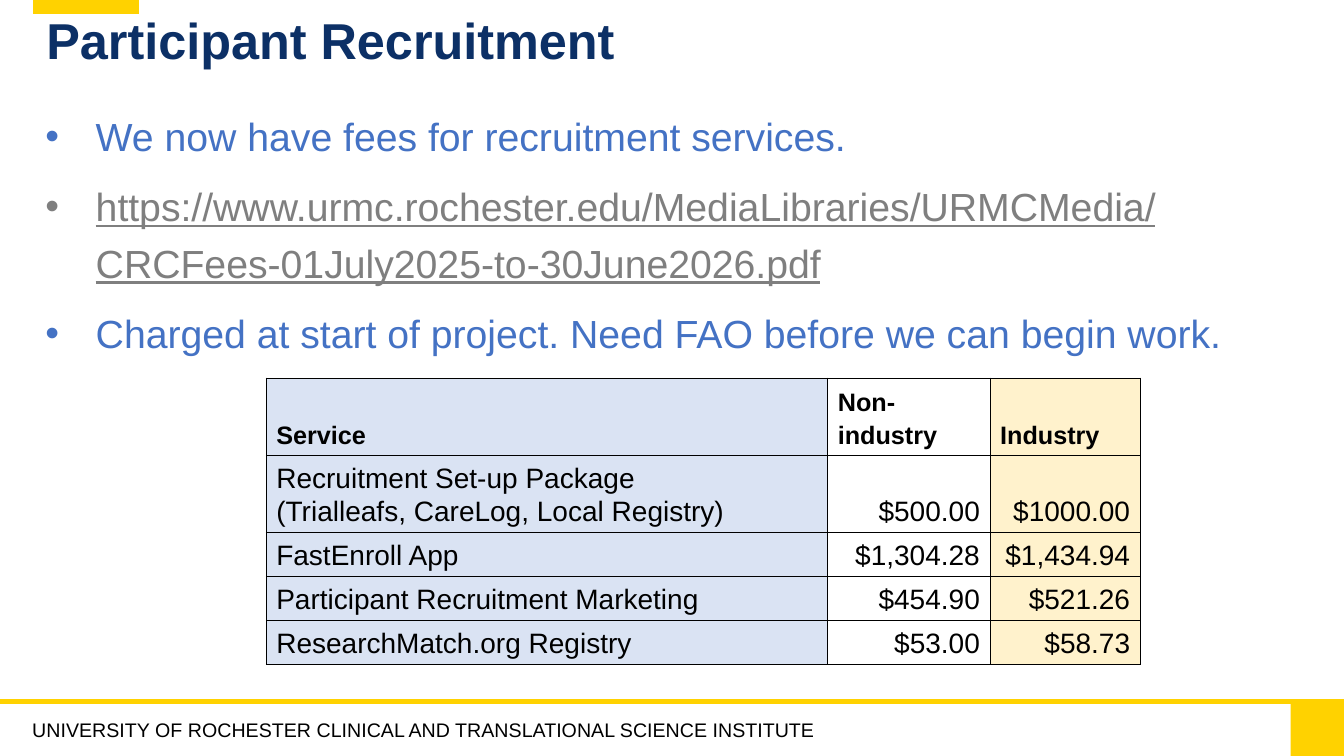
from lxml import etree
from pptx import Presentation
from pptx import util as u
from pptx.dml.color import RGBColor
from pptx.enum import shapes, text
from pptx.oxml import ns

GOLD = RGBColor(0xFF, 0xD2, 0x00)
NAVY = RGBColor(0x0C, 0x30, 0x66)
BLUE = RGBColor(0x44, 0x72, 0xC4)
GREY = RGBColor(0x7F, 0x7F, 0x7F)
BLACK = RGBColor(0, 0, 0)
PALE = RGBColor(0xDA, 0xE3, 0xF3)
CREAM = RGBColor(0xFF, 0xF2, 0xCC)

WIDE, TALL = 133.33, 75
BULLETS = [
    ("We now have fees for recruitment services.", BLUE, False),
    ("https://www.urmc.rochester.edu/MediaLibraries/URMCMedia/"
     "CRCFees-01July2025-to-30June2026.pdf", GREY, True),
    ("Charged at start of project. Need FAO before we can begin work.", BLUE, False),
]
FEES = [
    ("Service", "Non-industry", "Industry"),
    ("Recruitment Set-up Package\n(Trialleafs, CareLog, Local Registry)", "$500.00", "$1000.00"),
    ("FastEnroll\u00a0App".replace("\u00a0", " "), "$1,304.28", "$1,434.94"),
    ("Participant Recruitment Marketing", "$454.90", "$521.26"),
    ("ResearchMatch.org Registry", "$53.00", "$58.73"),
]


class Deck:
    """Draws styled elements on a slide, in grid cells of a 75th of its height."""

    def __init__(self, face):
        self.face = face
        self.show = Presentation()
        self.show.slide_width = u.Inches(13.33)
        self.show.slide_height = u.Inches(7.5)
        self.slide = self.show.slides.add_slide(self.show.slide_layouts[6])

    def grid(self, *cells):
        return [round(self.show.slide_height * n / TALL) for n in cells]

    def style(self, para, size, color, bold=False, under=False):
        font = para.font
        font.name, font.size, font.bold = self.face, u.Pt(size), bold
        font.underline = under
        font.color.rgb = color

    def line(self, left, right, row, width):
        rule = self.slide.shapes.add_connector(
            shapes.MSO_CONNECTOR.STRAIGHT, *self.grid(left, row, right, row))
        rule.line.color.rgb = GOLD
        rule.line.width = u.Pt(width)
        etree.SubElement(rule.element.spPr, ns.qn("a:effectLst"))

    def block(self, *box):
        block = self.slide.shapes.add_shape(shapes.MSO_SHAPE.RECTANGLE, *self.grid(*box))
        block.shadow.inherit = False
        block.fill.solid()
        block.fill.fore_color.rgb = GOLD
        block.line.fill.background()

    def frame(self, *box):
        frame = self.slide.shapes.add_textbox(*self.grid(*box)).text_frame
        frame.word_wrap = True
        frame.margin_left = 0
        return frame

    def label(self, words, box, size, color, bold=False, space=1.0,
              anchor=text.MSO_ANCHOR.TOP):
        frame = self.frame(*box)
        frame.vertical_anchor = anchor
        para = frame.paragraphs[0]
        para.text, para.line_spacing = words, space
        self.style(para, size, color, bold)

    def bullets(self, items, box, size):
        frame = self.frame(*box)
        dent = self.grid(5)[0]
        for i, (words, color, under) in enumerate(items):
            para = frame.add_paragraph() if i else frame.paragraphs[0]
            para.text, para.line_spacing = words, 1.2
            para.space_before = u.Pt(10 if i else 0)
            prop = para._p.get_or_add_pPr()
            prop.set("marL", str(dent))
            prop.set("indent", str(-dent))
            etree.SubElement(prop, ns.qn("a:buFont"), typeface=self.face)
            etree.SubElement(prop, ns.qn("a:buChar"), char="•")
            self.style(para, size, color, under=under)

    def border(self, cell):
        prop = cell._tc.get_or_add_tcPr()
        for i, side in enumerate(("lnL", "lnR", "lnT", "lnB")):
            edge = etree.Element(ns.qn("a:" + side), w=str(u.Pt(0.6)))
            fill = etree.SubElement(edge, ns.qn("a:solidFill"))
            etree.SubElement(fill, ns.qn("a:srgbClr"), val=str(BLACK))
            prop.insert(i, edge)

    def table(self, data, left, top, cols, rows, fills):
        box = self.grid(left, top, sum(cols), sum(rows))
        table = self.slide.shapes.add_table(len(rows), len(cols), *box).table
        table.first_row = table.horz_banding = False
        for col, width in zip(table.columns, self.grid(*cols)):
            col.width = width
        for row, height in zip(table.rows, self.grid(*rows)):
            row.height = height
        for r, line in enumerate(data):
            for c, words in enumerate(line):
                cell = table.cell(r, c)
                cell.text = words
                cell.vertical_anchor = text.MSO_ANCHOR.BOTTOM
                if fills[c]:
                    cell.fill.solid()
                    cell.fill.fore_color.rgb = fills[c]
                else:
                    cell.fill.background()
                self.border(cell)
                for para in cell.text_frame.paragraphs:
                    para.line_spacing = u.Pt(24)
                    if r and c:
                        para.alignment = text.PP_ALIGN.RIGHT
                    self.style(para, 20 if r else 18, BLACK, bold=not r)


def main():
    deck = Deck("Arial")
    deck.line(0, WIDE, 69.6, 4)
    deck.label("UNIVERSITY OF ROCHESTER CLINICAL AND TRANSLATIONAL SCIENCE INSTITUTE",
               (3.2, 70.7, 121, 3.4), 14, BLACK, anchor=text.MSO_ANCHOR.MIDDLE)
    deck.block(128, 69.6, 5.4, 5.4)
    deck.line(3.3, 13.8, 0.7, 10)
    deck.label("Participant Recruitment", (4.6, 1.1, 107.6, 14.5), 36, NAVY,
               bold=True, space=0.9)
    deck.bullets(BULLETS, (4.5, 9.7, 124.3, 55.5), 28)
    deck.table(FEES, 26.4, 37.5, (55.7, 16.1, 14.9), (6.5, 6.5, 4.1, 4.1, 4.4),
               (PALE, None, CREAM))
    deck.show.save("out.pptx")


if __name__ == "__main__":
    main()
